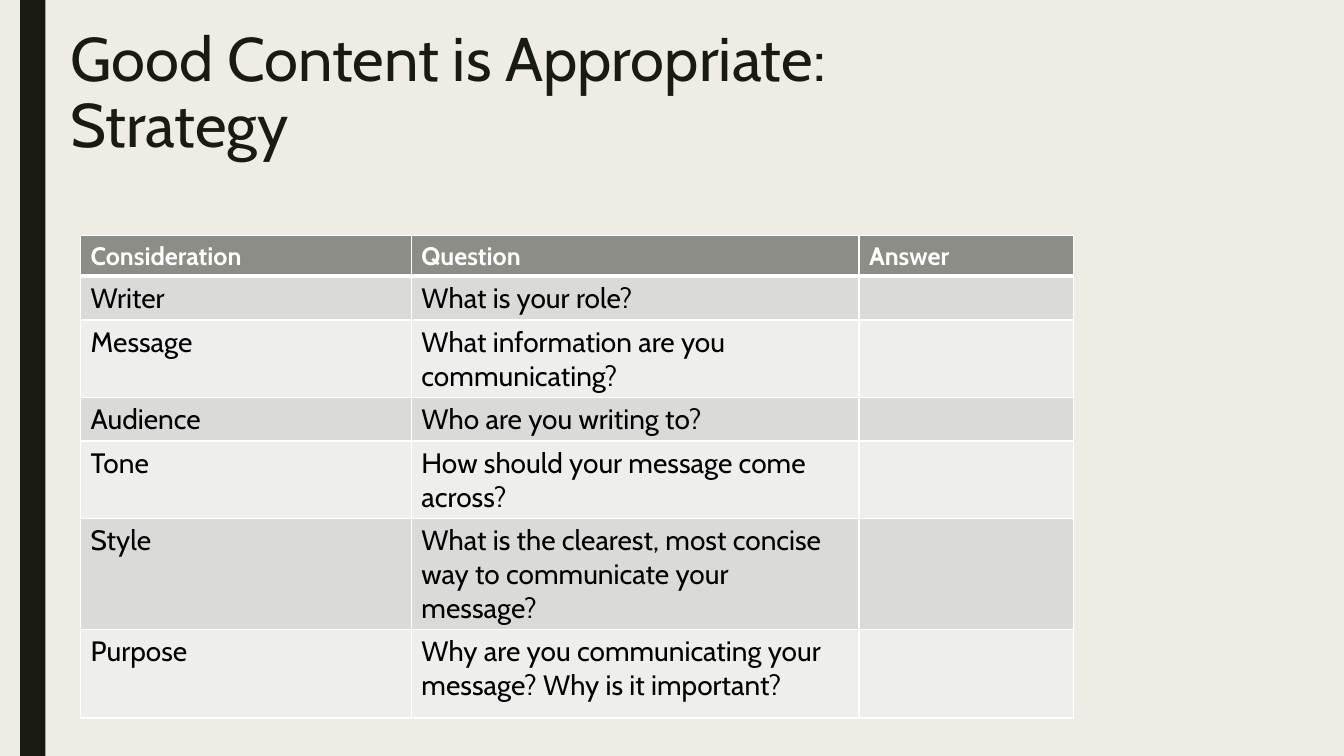
from pptx import Presentation
from pptx.dml.color import RGBColor
from pptx.enum.shapes import MSO_SHAPE as SHAPE
from pptx.enum.text import MSO_ANCHOR as ANCHOR
from pptx.oxml.ns import qn
from pptx.util import Inches, Pt
from lxml.etree import SubElement

FONT = "Cabin"
CREAM, DARK, WHITE, BLACK = "EFEDE3", "191B0E", "FFFFFF", "000000"
HEADER, BANDS = "8C8D86", ("DADBD9", "EEEEED")

COL_WIDTHS = (3.28, 4.44, 2.13)
ROW_HEIGHTS = (0.36, 0.36, 0.62, 0.36, 0.62, 0.88, 0.88)
ROWS = (
    ("Consideration", "Question", "Answer"),
    ("Writer", "What is your role?", ""),
    ("Message", "What information are you communicating?", ""),
    ("Audience", "Who are you writing to?", ""),
    ("Tone", "How should your message come across?", ""),
    ("Style", "What is the clearest, most concise way to communicate your message?", ""),
    ("Purpose", "Why are you communicating your message? Why is it important?", ""),
)


def paint(fill, color):
    fill.solid()
    fill.fore_color.rgb = RGBColor.from_string(color)


def style_text(p, size, color, bold=False):
    for r in p.runs:
        r.font.name, r.font.size, r.font.bold = FONT, Pt(size), bold
        r.font.color.rgb = RGBColor.from_string(color)


def add_bar(slide, left, top, width, height):
    sp = slide.shapes.add_shape(
        SHAPE.RECTANGLE, Inches(left), Inches(top), Inches(width), Inches(height))
    sp.shadow.inherit = False
    paint(sp.fill, DARK)
    sp.line.fill.background()


def add_title(slide, text, left, top, width, height):
    box = slide.shapes.add_textbox(
        Inches(left), Inches(top), Inches(width), Inches(height))
    tf = box.text_frame
    tf.word_wrap = True
    tf.vertical_anchor = ANCHOR.TOP
    tf.text = text
    p = tf.paragraphs[0]
    p.line_spacing = 0.89
    style_text(p, 44, DARK)


def set_border(cell, side, width):
    tc_pr = cell._tc.get_or_add_tcPr()
    ln = SubElement(tc_pr, qn(f"a:ln{side}"), w=str(Pt(width)))
    solid = SubElement(ln, qn("a:solidFill"))
    SubElement(solid, qn("a:srgbClr"), val=WHITE)


def fill_cell(cell, text, row):
    is_header = row == 0
    # A thick rule separates the header from the body
    widths = {"L": 1, "R": 1, "T": 3 if row == 1 else 1, "B": 3 if is_header else 1}
    for side, width in widths.items():
        set_border(cell, side, width)
    paint(cell.fill, HEADER if is_header else BANDS[(row - 1) % 2])
    cell.text_frame.text = text
    style_text(cell.text_frame.paragraphs[0], 18 if is_header else 20,
               WHITE if is_header else BLACK, is_header)


def add_strategy_table(slide, left, top):
    frame = slide.shapes.add_table(
        len(ROWS), len(COL_WIDTHS), Inches(left), Inches(top),
        Inches(sum(COL_WIDTHS)), Inches(sum(ROW_HEIGHTS)))
    table = frame.table
    for column, width in zip(table.columns, COL_WIDTHS):
        column.width = Inches(width)
    for i, (height, texts) in enumerate(zip(ROW_HEIGHTS, ROWS)):
        table.rows[i].height = Inches(height)
        for j, text in enumerate(texts):
            fill_cell(table.cell(i, j), text, i)


def main():
    prs = Presentation()
    prs.slide_width, prs.slide_height = Inches(13.33), Inches(7.5)
    slide = prs.slides.add_slide(prs.slide_layouts[6])
    paint(slide.background.fill, CREAM)

    # Side bar and title
    add_bar(slide, 0.2, 0, 0.25, 7.5)
    add_title(slide, "Good Content is Appropriate: Strategy", 0.6, 0.24, 9.62, 1.62)

    # Considerations and questions
    add_strategy_table(slide, 0.8, 2.34)

    prs.save("out.pptx")


if __name__ == "__main__":
    main()
